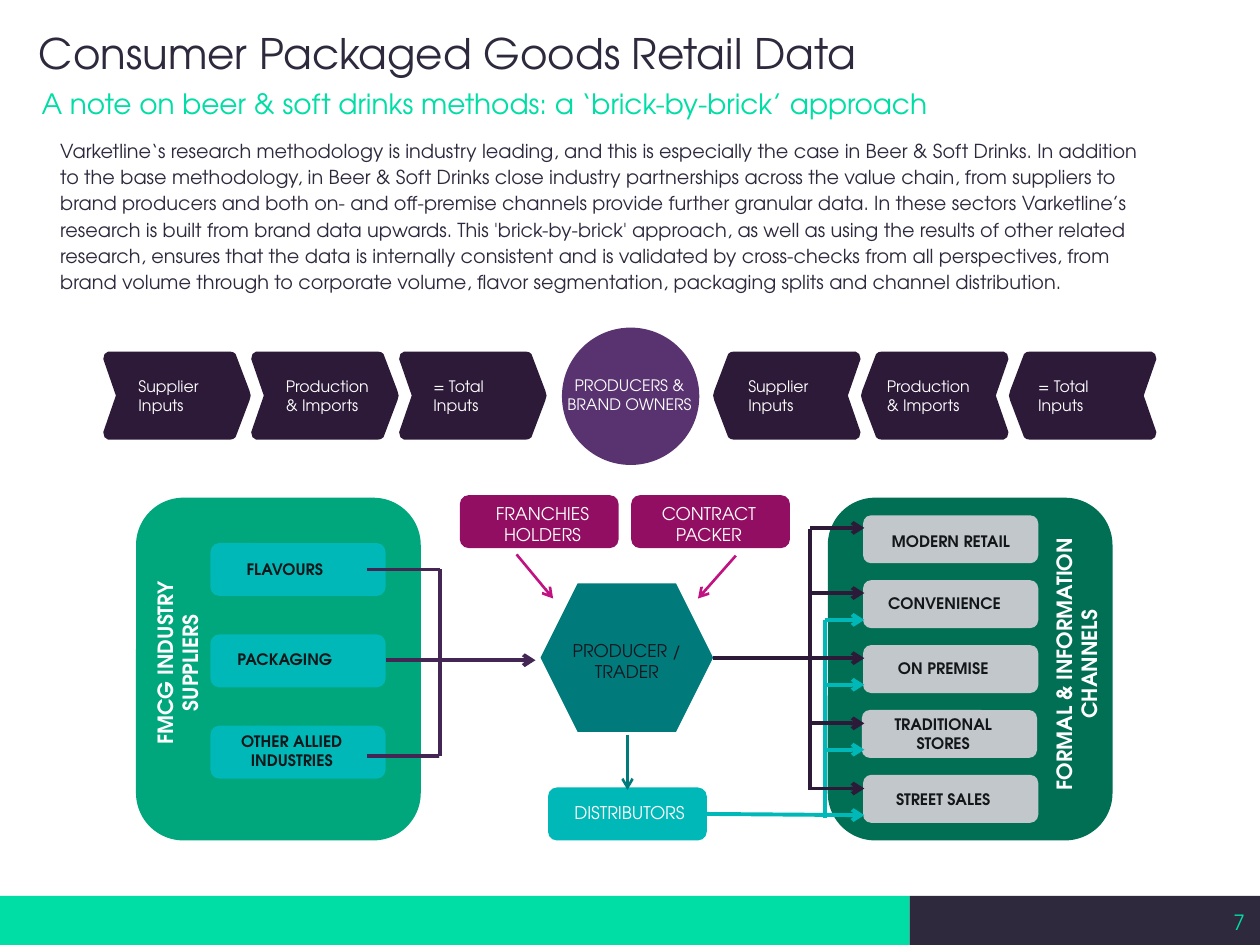
"""Build the consumer packaged goods value-chain slide on a grid of 100 columns by 75 rows."""
from lxml.etree import SubElement
from pptx import Presentation
from pptx.dml.color import RGBColor
from pptx.enum.shapes import MSO_CONNECTOR as Link, MSO_SHAPE as Form
from pptx.enum.text import MSO_ANCHOR as Anchor, PP_ALIGN as Align
from pptx.oxml.ns import qn
from pptx.util import Inches, Pt

FONT = "TeX Gyre Adventor"
WHITE = RGBColor(0xFF, 0xFF, 0xFF)
MINT = RGBColor(0x00, 0xDE, 0xA5)
SLATE = RGBColor(0x2E, 0x29, 0x3D)
GREEN = RGBColor(0x00, 0xA6, 0x7C)
FOREST = RGBColor(0x00, 0x6F, 0x53)
AQUA = RGBColor(0x00, 0xB8, 0xB8)
TEAL = RGBColor(0x00, 0x7A, 0x7A)
GREY = RGBColor(0xC2, 0xC7, 0xCB)
PALE = RGBColor(0xD5, 0xDA, 0xDD)
INK = RGBColor(0x14, 0x17, 0x19)
DARK = RGBColor(0x17, 0x14, 0x1E)
NIGHT = RGBColor(0x2D, 0x19, 0x38)
PLUM = RGBColor(0x43, 0x26, 0x54)
VIOLET = RGBColor(0x59, 0x33, 0x70)
BERRY = RGBColor(0x92, 0x0E, 0x62)
PINK = RGBColor(0xC2, 0x12, 0x82)

BODY = (
    "Varketline‘s research methodology is industry leading, and this is especially the case in "
    "Beer & Soft Drinks. In addition to the base methodology, in Beer & Soft Drinks close industry "
    "partnerships across the value chain, from suppliers to brand producers and both on- and "
    "off-premise channels provide further granular data. In these sectors Varketline’s research is "
    "built from brand data upwards. This 'brick-by-brick' approach, as well as using the results of "
    "other related research, ensures that the data is internally consistent and is validated by "
    "cross-checks from all perspectives, from brand volume through to corporate volume, flavor "
    "segmentation, packaging splits and channel distribution."
)
CHEVRON_HALF = [(11.7, 3.5), (11.6, 3.1), (10.5, 0.2), (10.3, 0.05), (10, 0),
                (0.4, 0), (0.1, 0.2), (0, 0.6), (1, 3.5)]
CHEVRON_STEP = 11.74
STAGES = ["Supplier Inputs", "Production & Imports", "= Total Inputs"]
ROW_STEP = 5.15


def grid(*units):
    """Turn grid units into slide lengths."""
    return [Inches(unit / 10) for unit in units]


def add_block(page, form, place, colour):
    """Add a flat, unlined preset shape."""
    return flatten(page.shapes.add_shape(form, *grid(*place)), colour)


def flatten(shape, colour):
    """Give a shape one solid colour and no line or shadow."""
    shape.shadow.inherit = False
    shape.fill.solid()
    shape.fill.fore_color.rgb = colour
    shape.line.fill.background()
    return shape


def add_label(page, text, place, size, colour, bold=False, align=Align.CENTER, turn=0):
    """Add a wrapped text box and return it."""
    box = page.shapes.add_textbox(*grid(*place))
    box.rotation = turn
    box.text_frame.word_wrap = True
    para = box.text_frame.paragraphs[0]
    para.alignment = align
    span = para.add_run()
    span.text = text
    span.font.name, span.font.size, span.font.bold = FONT, Pt(size), bold
    span.font.color.rgb = colour
    return box


def set_insets(box, left=0):
    """Remove the box margins, except for an optional left one."""
    frame = box.text_frame
    frame.margin_left = grid(left)[0]
    frame.margin_right = frame.margin_top = frame.margin_bottom = 0


def add_line(page, ends, colour, width=2.25, arrow=True):
    """Add a straight connector, with an arrowhead at its end if wanted."""
    line = page.shapes.add_connector(Link.STRAIGHT, *grid(*ends))
    line.line.color.rgb = colour
    line.line.width = Pt(width)
    if arrow:
        SubElement(line.line._get_or_add_ln(), qn("a:tailEnd"), type="arrow")
    SubElement(line._element.spPr, qn("a:effectLst"))


def add_chevron(page, left, mirrored):
    """Add a soft-cornered chevron that points right, or left if mirrored."""
    lower = [(x, 7 - y) for x, y in reversed(CHEVRON_HALF[1:-1])]
    points = [grid(left + (11.7 - x if mirrored else x), 27.9 + y)
              for x, y in CHEVRON_HALF + lower]
    builder = page.shapes.build_freeform(*points[0])
    builder.add_line_segments(points[1:], close=True)
    flatten(builder.convert_to_shape(), NIGHT)


def add_heading(page):
    """Add the title, subtitle and introduction."""
    title = add_label(page, "Consumer Packaged Goods Retail Data", (0, 0, 100, 8.3), 24,
                      SLATE, align=Align.LEFT)
    set_insets(title, 3.1)
    title.text_frame.vertical_anchor = Anchor.MIDDLE
    set_insets(add_label(page, "A note on beer & soft drinks methods: a ‘brick-by-brick’ approach",
                         (3.3, 6.9, 93.5, 4.4), 16, MINT, align=Align.LEFT))
    intro = add_label(page, BODY, (3.8, 10.3, 89, 13.8), 11, SLATE, align=Align.LEFT)
    intro.text_frame.paragraphs[0].line_spacing = Pt(15)


def add_footer(page):
    """Add the two-tone bar and the page number."""
    add_block(page, Form.RECTANGLE, (0, 71.1, 72.2, 3.9), MINT)
    add_block(page, Form.RECTANGLE, (72.2, 71.1, 27.8, 3.9), SLATE)
    number = add_label(page, "7", (76.3, 71.2, 22.5, 4), 12, MINT, align=Align.RIGHT)
    set_insets(number)
    number.text_frame.vertical_anchor = Anchor.MIDDLE


def add_chain(page):
    """Add the chevron chains on both sides of the producers circle."""
    for start, mirrored, label_lefts in ((8.2, False, (10, 21.7, 33.4)),
                                         (56.6, True, (58.4, 69.4, 81.4))):
        for index, (stage, label_left) in enumerate(zip(STAGES, label_lefts)):
            add_chevron(page, start + index * CHEVRON_STEP, mirrored)
            add_label(page, stage, (label_left, 29.4, 9 if index == 1 else 8.2, 4), 9,
                      WHITE, align=Align.LEFT)
    add_block(page, Form.OVAL, (44.6, 26, 10.9, 10.9), VIOLET)
    add_label(page, "PRODUCERS & BRAND OWNERS", (43.9, 29.3, 12.1, 4), 9, WHITE)


def add_suppliers(page):
    """Add the supplier panel and the bracket that leads to the producer."""
    add_block(page, Form.ROUNDED_RECTANGLE, (10.8, 39.5, 22.6, 27.2), GREEN)
    rows = [("FLAVOURS", 43.9, 10.8), ("PACKAGING", 51.1, 10.8),
            ("OTHER ALLIED INDUSTRIES", 57.6, 11.9)]
    for index, (name, top, width) in enumerate(rows):
        add_block(page, Form.ROUNDED_RECTANGLE, (16.7, 43.1 + 7.25 * index, 13.9, 4.2), AQUA)
        add_label(page, name, (17.2, top, width, 2.5), 9, INK, bold=True)
    add_label(page, "FMCG INDUSTRY SUPPLIERS", (3.8, 50.1, 20.6, 5), 12, WHITE, True, turn=270)
    for level in (45.2, 60):
        add_line(page, (29.1, level, 34.9, level), PLUM, arrow=False)
    add_line(page, (34.9, 45.2, 34.9, 60.2), PALE, 0.75, arrow=False)
    add_line(page, (34.9, 45.2, 34.9, 60), PLUM, arrow=False)
    add_line(page, (30.6, 52.4, 42.5, 52.4), PLUM)


def add_producer(page):
    """Add the producer with its partners and distributors."""
    blocks = [("FRANCHIES HOLDERS", (36.5, 39.3), (37.1, 39.4), BERRY),
              ("CONTRACT PACKER", (50.1, 39.3), (50.3, 39.4), BERRY),
              ("DISTRIBUTORS", (43.5, 62.5), (44, 63.2), AQUA)]
    for name, corner, label_corner, colour in blocks:
        add_block(page, Form.ROUNDED_RECTANGLE, (*corner, 12.6, 4.2), colour)
        add_label(page, name, (*label_corner, 11.9, 4.4), 10, WHITE)
    add_block(page, Form.HEXAGON, (42.9, 46.3, 13.7, 11.8), TEAL)
    add_label(page, "PRODUCER / TRADER", (43.8, 50.3, 11.9, 4.4), 10, DARK)
    add_line(page, (49.8, 58.3, 49.8, 62.7), TEAL, 1.5)
    add_line(page, (58.4, 44.1, 55.4, 47.5), PINK, 1.5)
    add_line(page, (41, 44, 43.9, 47.5), PINK, 1.5)


def add_channels(page):
    """Add the channel panel and the lines that feed it."""
    add_block(page, Form.ROUNDED_RECTANGLE, (65.7, 39.5, 22.6, 27.2), FOREST)
    rows = [("MODERN RETAIL", 41.7, 13.1), ("CONVENIENCE", 46.6, 12.1), ("ON PREMISE", 51.8, 11.9),
            ("TRADITIONAL STORES", 56.2, 11.9), ("STREET SALES", 62.2, 11.9)]
    for index, (name, top, width) in enumerate(rows):
        left = 68.4 if index == 3 else 68.5
        add_block(page, Form.ROUNDED_RECTANGLE, (left, 40.9 + ROW_STEP * index, 13.9, 3.8), GREY)
        add_label(page, name, (68.9, top, width, 2.5), 9, INK, bold=True)
    add_label(page, "FORMAL & INFORMATION CHANNELS", (73.8, 50.2, 23.3, 5), 12, WHITE, True,
              turn=270)
    for index in range(3):
        level = 49.2 + ROW_STEP * index
        add_line(page, (65.5, level, 68.6, level), AQUA)
    add_line(page, (56.1, 64.6, 68.6, 64.7), AQUA)
    add_line(page, (65.5, 49.2, 65.5, 64.9), AQUA, arrow=False)
    add_line(page, (64.3, 42, 64.3, 62.7), NIGHT, arrow=False)
    for index in range(5):
        level = 41.9 + 5.17 * index
        add_line(page, (56.6 if index == 2 else 64.3, level, 68.6, level), NIGHT)


def main():
    """Build the slide and save the deck."""
    deck = Presentation()
    deck.slide_width, deck.slide_height = grid(100, 75)
    page = deck.slides.add_slide(deck.slide_layouts[6])
    for part in (add_footer, add_heading, add_chain, add_suppliers, add_producer, add_channels):
        part(page)
    deck.save("out.pptx")


if __name__ == "__main__":
    main()
